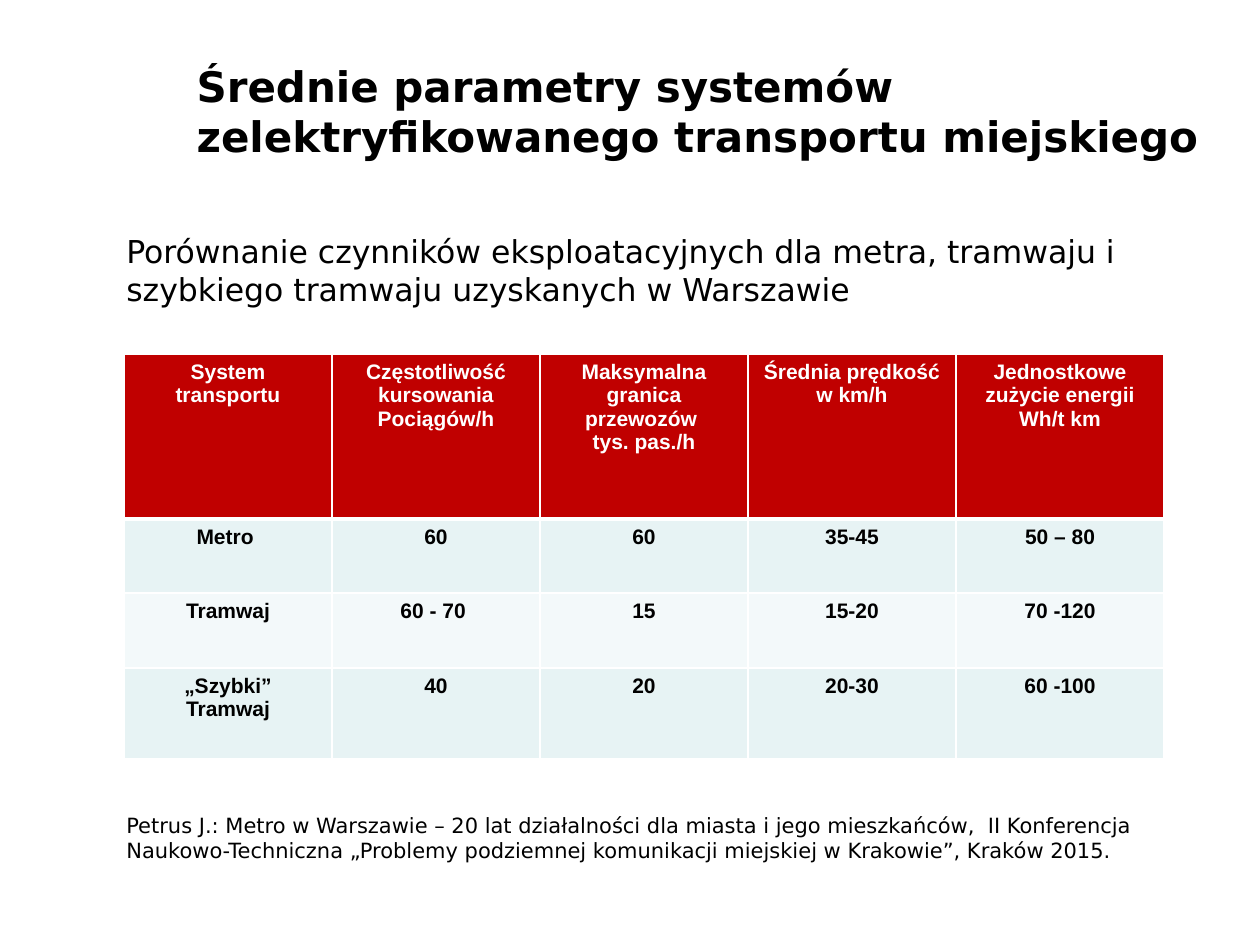
from dataclasses import dataclass

from lxml import etree
from pptx import Presentation
from pptx.dml.color import RGBColor
from pptx.enum.text import MSO_ANCHOR, MSO_AUTO_SIZE, PP_ALIGN
from pptx.oxml.ns import qn
from pptx.util import Pt

LEFT, CENTER = PP_ALIGN.LEFT, PP_ALIGN.CENTER
TOP, MIDDLE = MSO_ANCHOR.TOP, MSO_ANCHOR.MIDDLE
NO_FIT = MSO_AUTO_SIZE.NONE
SCALE = 914400 / 126


@dataclass(frozen=True)
class Theme:
    text_font: str = "DejaVu Sans"
    cell_font: str = "Arial"
    black: str = "000000"
    white: str = "FFFFFF"
    red: str = "C00000"
    bands: tuple = ("E7F3F4", "F3F9FA")
    title: int = 24
    lead: int = 18
    small: int = 12


THEME = Theme()

TITLE = "Średnie parametry systemów zelektryfikowanego transportu miejskiego"
LEAD = ("Porównanie czynników eksploatacyjnych dla metra, tramwaju i "
        "szybkiego tramwaju uzyskanych w Warszawie")
SOURCE = ("Petrus J.: Metro w Warszawie – 20 lat działalności dla miasta i jego "
          "mieszkańców,  II Konferencja Naukowo-Techniczna „Problemy podziemnej "
          "komunikacji miejskiej w Krakowie”, Kraków 2015.")
ROWS = [
    ["System transportu", "Częstotliwość kursowania\nPociągów/h",
     "Maksymalna granica przewozów \ntys. pas./h", "Średnia prędkość w km/h",
     "Jednostkowe zużycie energii\nWh/t km"],
    ["Metro ", "60", "60", "35-45", "50 – 80"],
    ["Tramwaj", "60 - 70 ", "15", "15-20", "70 -120"],
    ["„Szybki”\nTramwaj", "40", "20", "20-30", "60 -100"],
]
HEIGHTS = [165, 74, 75, 91]


def px(n):
    return round(n * SCALE)


def write(frame, text, font, size, color, bold=False, align=LEFT):
    frame.text = text
    frame.word_wrap = True
    for par in frame.paragraphs:
        par.alignment = align
        par.font.name = font
        par.font.size = Pt(size)
        par.font.bold = bold
        par.font.color.rgb = RGBColor.from_string(color)


def add_title(slide, box):
    shape = slide.shapes.title
    shape.left, shape.top, shape.width, shape.height = map(px, box)
    frame = shape.text_frame
    write(frame, TITLE, THEME.text_font, THEME.title, THEME.black, bold=True)
    frame.auto_size = NO_FIT
    frame.vertical_anchor = MIDDLE


def add_note(slide, box, text, size):
    frame = slide.shapes.add_textbox(*map(px, box)).text_frame
    write(frame, text, THEME.text_font, size, THEME.black)
    frame.vertical_anchor = TOP


def add_edges(cell, head):
    """Draw white cell borders, with a heavy rule around the header's foot."""
    props = cell._tc.get_or_add_tcPr()
    for i, side in enumerate("LRTB"):
        width = 3 if head and side == "B" else 1
        line = etree.Element(qn(f"a:ln{side}"), w=str(Pt(width)))
        fill = etree.SubElement(line, qn("a:solidFill"))
        etree.SubElement(fill, qn("a:srgbClr"), val=THEME.white)
        props.insert(i, line)


def add_grid(slide, box):
    shape = slide.shapes.add_table(len(ROWS), len(ROWS[0]), *map(px, box))
    table = shape.table
    for col in table.columns:
        col.width = px(box[2] // len(ROWS[0]))
    for r, (texts, height) in enumerate(zip(ROWS, HEIGHTS)):
        table.rows[r].height = px(height)
        head = r == 0
        back = THEME.red if head else THEME.bands[(r - 1) % 2]
        color = THEME.white if head else THEME.black
        for c, text in enumerate(texts):
            cell = table.cell(r, c)
            write(cell.text_frame, text, THEME.cell_font, THEME.small, color,
                  bold=True, align=CENTER)
            cell.fill.solid()
            cell.fill.fore_color.rgb = RGBColor.from_string(back)
            add_edges(cell, head)


def main():
    deck = Presentation()
    deck.slide_width, deck.slide_height = px(1260), px(945)
    slide = deck.slides.add_slide(deck.slide_layouts[5])
    add_title(slide, (184, 46, 1042, 130))
    add_note(slide, (114, 226, 1084, 90), LEAD, THEME.lead)
    add_grid(slide, (124, 354, 1040, sum(HEIGHTS)))
    add_note(slide, (114, 806, 1084, 64), SOURCE, THEME.small)
    deck.save("out.pptx")


if __name__ == "__main__":
    main()
